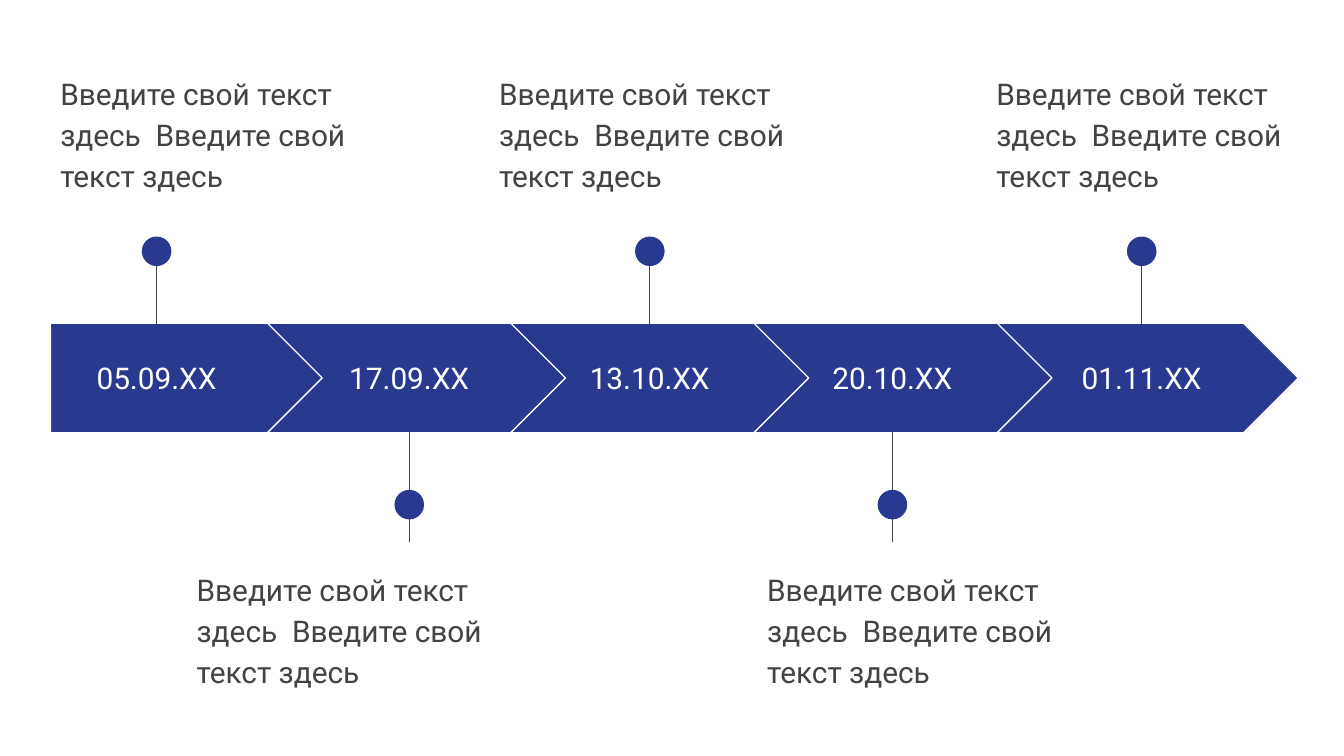
from lxml import etree
from pptx import Presentation
from pptx import util as u
from pptx.dml.color import RGBColor
from pptx.enum import shapes, text
from pptx.oxml.ns import qn

PX = 4572
BLUE, GREY, WHITE = "2A3990", "434343", "FFFFFF"
FONT = "Roboto"
NOTE = "Введите свой текст здесь  Введите свой текст здесь"
STEPS = [
    ("05.09.XX", 233, 318, 70),
    ("17.09.XX", 609, 288, 273),
    ("13.10.XX", 967, 288, 723),
    ("20.10.XX", 1328, 288, 1122),
    ("01.11.XX", 1699, 288, 1463),
]
ARROW_H, FIRST_W, ARROW_W, PITCH = 163, 409, 448, 362
DOT, PIN_H = 44, 130
NOTE_W, NOTE_H = 490, 198


def px(*values):
    return [u.Emu(v * PX) for v in values]


def color(value):
    return RGBColor.from_string(value)


def add_text(s, content, box, size=16, fill=GREY, align=text.PP_ALIGN.LEFT,
             anchor=text.MSO_ANCHOR.TOP, spacing=1.0):
    tf = s.shapes.add_textbox(*px(*box)).text_frame
    tf.word_wrap = True
    tf.vertical_anchor = anchor
    tf.margin_left, tf.margin_top, tf.margin_right, tf.margin_bottom = px(20, 20, 20, 20)
    p = tf.paragraphs[0]
    p.alignment = align
    p.line_spacing = spacing
    r = p.add_run()
    r.text = content
    r.font.name = FONT
    r.font.size = u.Pt(size)
    r.font.color.rgb = color(fill)


def add_shape(s, kind, box, line=None):
    sp = s.shapes.add_shape(kind, *px(*box))
    sp.shadow.inherit = False
    sp.fill.solid()
    sp.fill.fore_color.rgb = color(BLUE)
    if line:
        sp.line.color.rgb = color(line)
        sp.line.width = u.Pt(0.75)
    else:
        sp.line.fill.background()


def add_stem(s, x, start, end):
    c = s.shapes.add_connector(shapes.MSO_CONNECTOR.STRAIGHT, *px(x, start, x, end))
    c.line.color.rgb = color(GREY)
    c.line.width = u.Pt(0.75)
    etree.SubElement(c._element.spPr, qn("a:effectLst"))


def add_arrow(s, box, first):
    kind = shapes.MSO_SHAPE.PENTAGON if first else shapes.MSO_SHAPE.CHEVRON
    add_shape(s, kind, box, line=WHITE)


def add_date(s, date, box):
    add_text(s, date, box, fill=WHITE, align=text.PP_ALIGN.CENTER,
             anchor=text.MSO_ANCHOR.MIDDLE)


def add_pin(s, box, above):
    left, top, width, height = box
    x = left + width // 2
    if above:
        add_stem(s, x, top + 8, top + height)
        dot_top = top
    else:
        add_stem(s, x, top + height + 34, top)
        dot_top = top + height - DOT
    add_shape(s, shapes.MSO_SHAPE.OVAL, (left, dot_top, width, DOT))


def add_timeline(s, box):
    left, top, width, height = box
    band = top + 397
    for i, (date, pin, date_w, note_x) in enumerate(STEPS):
        first, above = i == 0, i % 2 == 0
        x = left if first else left + 323 + (i - 1) * PITCH
        add_arrow(s, (x, band, FIRST_W if first else ARROW_W, ARROW_H), first)
        add_date(s, date, (pin - date_w // 2, band + 30, date_w, 102))
        pin_top = band - 129 if above else band + ARROW_H - 1
        add_pin(s, (pin - DOT // 2, pin_top, DOT, PIN_H), above)
        note_top = top if above else top + height - NOTE_H
        add_text(s, NOTE, (note_x, note_top, NOTE_W, NOTE_H), spacing=1.15)


def main():
    prs = Presentation()
    prs.slide_width, prs.slide_height = px(2000, 1125)
    s = prs.slides.add_slide(prs.slide_layouts[6])
    add_timeline(s, (75, 84, 1857, 937))
    prs.save("out.pptx")


if __name__ == "__main__":
    main()
